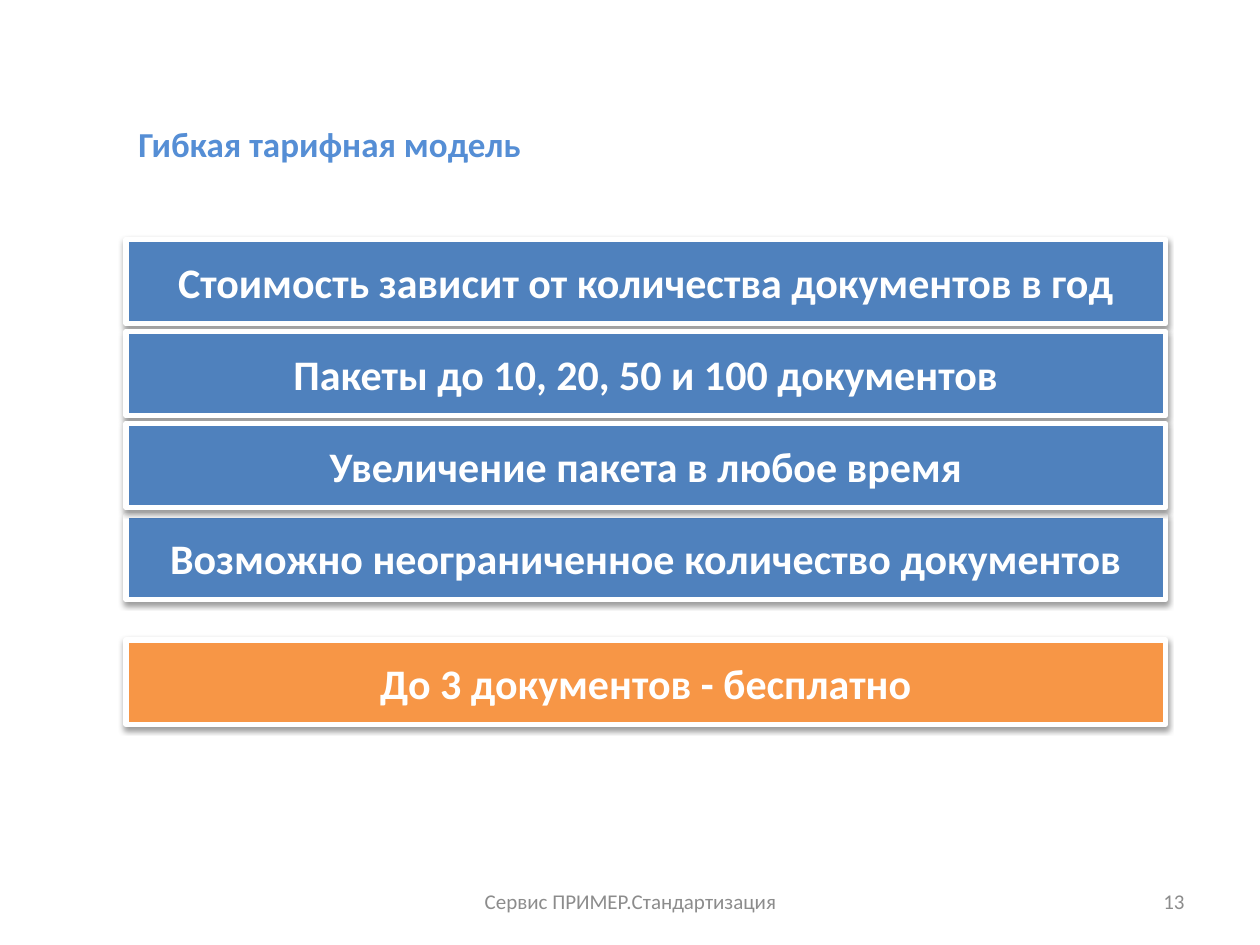
import pptx
import pptx.dml.color
import pptx.enum.shapes
import pptx.enum.text
import pptx.oxml.ns
import pptx.util
from lxml import etree

Inches = pptx.util.Inches
Pt = pptx.util.Pt
ALIGN = pptx.enum.text.PP_ALIGN
ANCHOR = pptx.enum.text.MSO_ANCHOR
FIT = pptx.enum.text.MSO_AUTO_SIZE
qn = pptx.oxml.ns.qn

LEFT, WIDTH, HEIGHT = 1, 8.25, 0.67
TOP, STEP = 1.9, 0.73
BLUE, ORANGE, WHITE, GREY = "4F81BD", "F79646", "FFFFFF", "8C8C8C"


def color(code):
    return pptx.dml.color.RGBColor.from_string(code)


def write(shape, text, size, code, bold=False, align=ALIGN.LEFT,
          anchor=ANCHOR.MIDDLE, fit=FIT.NONE):
    frame = shape.text_frame
    frame.word_wrap = True
    frame.auto_size = fit
    frame.vertical_anchor = anchor
    par = frame.paragraphs[0]
    par.text = text
    par.alignment = align
    par.font.name = "Calibri"
    par.font.size = Pt(size)
    par.font.bold = bold
    par.font.color.rgb = color(code)


def label(slide, box, text, size, code, **style):
    shape = slide.shapes.add_textbox(*map(Inches, box))
    write(shape, text, size, code, **style)


def shade(shape):
    """Put a soft shadow straight below the shape."""
    shape.shadow.inherit = False
    effects = shape._element.spPr.find(qn("a:effectLst"))
    outer = etree.SubElement(effects, qn("a:outerShdw"), blurRad=str(Pt(3.1)),
                             dist=str(Pt(1.6)), dir="5400000", rotWithShape="0")
    black = etree.SubElement(outer, qn("a:srgbClr"), val="000000")
    etree.SubElement(black, qn("a:alpha"), val="38000")


def band(slide, top, text, fill, fit=FIT.SHAPE_TO_FIT_TEXT):
    shape = slide.shapes.add_shape(
        pptx.enum.shapes.MSO_SHAPE.RECTANGLE,
        *map(Inches, (LEFT, top, WIDTH, HEIGHT)))
    shape.fill.solid()
    shape.fill.fore_color.rgb = color(fill)
    shape.line.color.rgb = color(WHITE)
    shape.line.width = Pt(3)
    shade(shape)
    write(shape, text, 24, WHITE, bold=True, align=ALIGN.CENTER, fit=fit)


def main():
    deck = pptx.Presentation()
    deck.slide_width, deck.slide_height = Inches(10), Inches(7.5)
    slide = deck.slides.add_slide(deck.slide_layouts[6])

    label(slide, (LEFT, 0.92, 8.42, 0.44), "Гибкая тарифная модель", 20,
          "558ED5", bold=True, anchor=ANCHOR.TOP, fit=FIT.SHAPE_TO_FIT_TEXT)
    label(slide, (7.17, 6.95, 2.33, 0.4), "13", 12, GREY, align=ALIGN.RIGHT)
    label(slide, (3.42, 6.95, 3.17, 0.4), "Сервис ПРИМЕР.Стандартизация", 12,
          GREY, align=ALIGN.CENTER)

    # The third row comes last so that its shadow falls on the fourth.
    rows = [
        (0, "Стоимость зависит от количества документов в год"),
        (1, "Пакеты до 10, 20, 50 и 100 документов"),
        (3, "Возможно неограниченное количество документов"),
        (2, "Увеличение пакета в любое время"),
    ]
    for row, text in rows:
        band(slide, TOP + row * STEP, text, BLUE)
    band(slide, 5.08, "До 3 документов - бесплатно", ORANGE, fit=FIT.NONE)

    deck.save("out.pptx")


if __name__ == "__main__":
    main()
